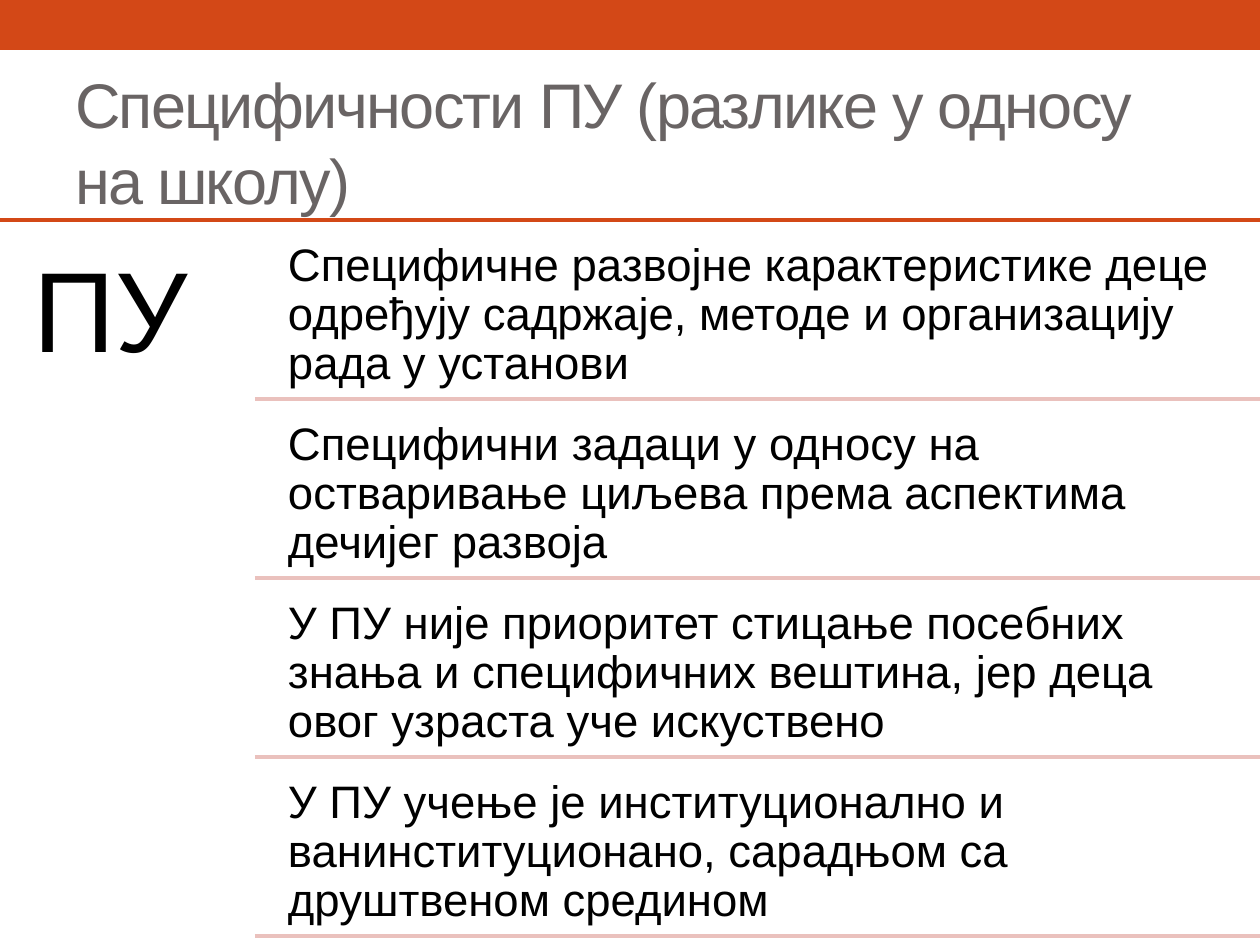
from dataclasses import dataclass

from lxml import etree
from pptx import Presentation
from pptx.dml.color import RGBColor
from pptx.enum.shapes import MSO_CONNECTOR, MSO_SHAPE
from pptx.enum.text import MSO_ANCHOR, MSO_AUTO_SIZE, PP_ALIGN
from pptx.oxml.ns import qn
from pptx.util import Emu, Pt

RECT = MSO_SHAPE.RECTANGLE
STRAIGHT = MSO_CONNECTOR.STRAIGHT
TOP, MIDDLE = MSO_ANCHOR.TOP, MSO_ANCHOR.MIDDLE
LEFT = PP_ALIGN.LEFT
NO_FIT = MSO_AUTO_SIZE.NONE

EMU_PER_PX = 914400 / 126
TITLE_ONLY = 5


@dataclass(frozen=True)
class Theme:
    font: str = "Arial"
    accent: str = "D34817"
    rule: str = "EAC1BD"
    title: str = "696464"
    ink: str = "000000"
    title_pt: int = 36
    topic_pt: int = 65
    item_pt: int = 26
    rule_pt: float = 2.25


@dataclass(frozen=True)
class Box:
    left: int
    top: int
    width: int
    height: int

    def emu(self) -> tuple[Emu, ...]:
        return tuple(px(v) for v in (self.left, self.top, self.width, self.height))


THEME = Theme()
WIDTH, HEIGHT = 1260, 945
HEADER_Y = 220
TOPIC_WIDTH = 255
ITEM_LEFT, ITEM_TOP, ITEM_HEIGHT, ITEM_PITCH = 275, 229, 170, 179

TITLE = "Специфичности ПУ (разлике у односу на школу)"
TOPIC = "ПУ"
ITEMS = (
    "Специфичне развојне карактеристике деце одређују садржаје, методе и организацију рада у установи",
    "Специфични задаци у односу на остваривање циљева према аспектима дечијег развоја",
    "У ПУ није приоритет стицање посeбних знања и специфичних вештина, јер деца овог узраста уче искуствено",
    "У ПУ учење је институционално и ванинституционано, сарадњом са друштвеном средином",
)


def px(value: int) -> Emu:
    return Emu(round(value * EMU_PER_PX))


def write_text(sp, text: str, *, size: int, color: str, inset: int, anchor=TOP,
               line_spacing: float = 0.9, tracking: int = 0) -> None:
    """Fill a shape with one paragraph; tracking is in hundredths of a point."""
    tf = sp.text_frame
    tf.word_wrap = True
    tf.auto_size = NO_FIT
    tf.vertical_anchor = anchor
    tf.margin_left = tf.margin_right = tf.margin_top = tf.margin_bottom = px(inset)
    p = tf.paragraphs[0]
    p.alignment = LEFT
    p.line_spacing = line_spacing
    r = p.add_run()
    r.text = text
    r.font.name = THEME.font
    r.font.size = Pt(size)
    r.font.color.rgb = RGBColor.from_string(color)
    if tracking:
        r.font._element.set("spc", str(tracking))


def add_text(s, box: Box, text: str, *, size: int, inset: int) -> None:
    sp = s.shapes.add_textbox(*box.emu())
    write_text(sp, text, size=size, color=THEME.ink, inset=inset)


def add_rule(s, left: int, y: int, color: str) -> None:
    line = s.shapes.add_connector(STRAIGHT, px(left), px(y), px(WIDTH), px(y))
    line.line.color.rgb = RGBColor.from_string(color)
    line.line.width = Pt(THEME.rule_pt)
    etree.SubElement(line._element.spPr, qn("a:effectLst"))


def add_band(s, box: Box) -> None:
    sp = s.shapes.add_shape(RECT, *box.emu())
    sp.shadow.inherit = False
    sp.fill.solid()
    sp.fill.fore_color.rgb = RGBColor.from_string(THEME.accent)
    sp.line.fill.background()


def set_title(s, box: Box) -> None:
    sp = s.shapes.title
    sp.left, sp.top, sp.width, sp.height = box.emu()
    write_text(sp, TITLE, size=THEME.title_pt, color=THEME.title, inset=12,
               anchor=MIDDLE, line_spacing=1.0, tracking=-100)


def main() -> None:
    prs = Presentation()
    prs.slide_width, prs.slide_height = px(WIDTH), px(HEIGHT)
    s = prs.slides.add_slide(prs.slide_layouts[TITLE_ONLY])

    add_band(s, Box(0, 0, WIDTH, 50))
    set_title(s, Box(63, 73, 1134, 136))
    add_rule(s, 0, HEADER_Y, THEME.accent)
    add_text(s, Box(0, HEADER_Y, TOPIC_WIDTH, HEIGHT - HEADER_Y), TOPIC,
             size=THEME.topic_pt, inset=34)

    for i, item in enumerate(ITEMS):
        box = Box(ITEM_LEFT, ITEM_TOP + i * ITEM_PITCH, WIDTH - ITEM_LEFT, ITEM_HEIGHT)
        add_text(s, box, item, size=THEME.item_pt, inset=13)
        add_rule(s, TOPIC_WIDTH, box.top + box.height, THEME.rule)

    prs.save("out.pptx")


if __name__ == "__main__":
    main()
